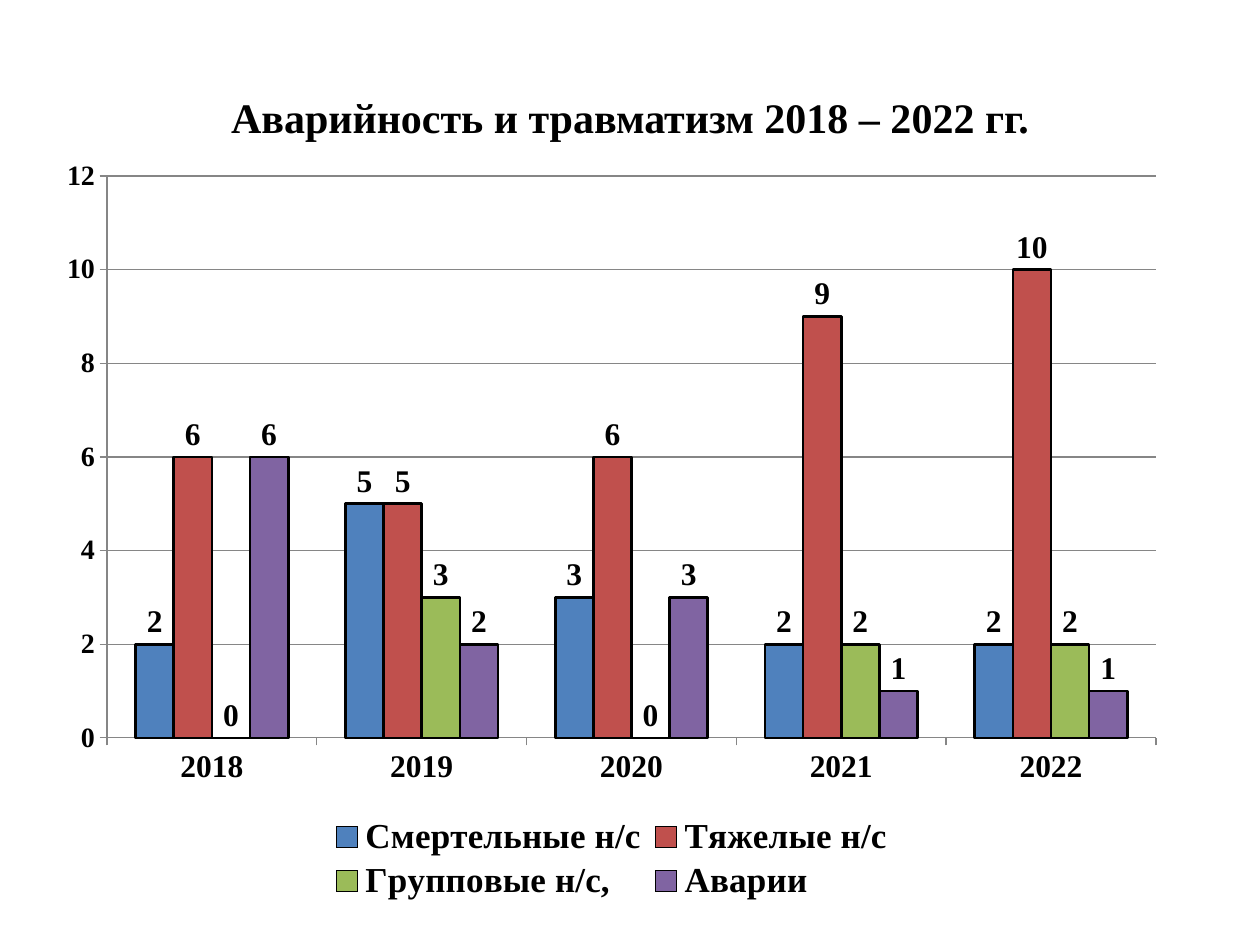
from dataclasses import dataclass

from lxml import etree
from pptx import Presentation
from pptx.chart.data import CategoryChartData
from pptx.dml.color import RGBColor
from pptx.enum.chart import XL_CHART_TYPE, XL_LABEL_POSITION, XL_LEGEND_POSITION, XL_TICK_MARK
from pptx.enum.text import MSO_ANCHOR, PP_ALIGN
from pptx.oxml.ns import qn
from pptx.util import Emu, Pt

COLUMNS = XL_CHART_TYPE.COLUMN_CLUSTERED
OUTSIDE_END = XL_LABEL_POSITION.OUTSIDE_END
LEGEND_BOTTOM = XL_LEGEND_POSITION.BOTTOM
TICK_OUT = XL_TICK_MARK.OUTSIDE
MIDDLE = MSO_ANCHOR.MIDDLE
CENTER = PP_ALIGN.CENTER

PX = 914400 / 126
TITLE_ONLY = 5

YEARS = ["2018", "2019", "2020", "2021", "2022"]
INCIDENTS = {
    "Смертельные н/с": (2, 5, 3, 2, 2),
    "Тяжелые н/с": (6, 5, 6, 9, 10),
    "Групповые н/с, ": (0, 3, 0, 2, 2),
    "Аварии": (6, 2, 3, 1, 1),
}


@dataclass(frozen=True)
class Theme:
    font: str = "Times New Roman"
    text: str = "000000"
    grid: str = "868686"
    series: tuple = ("4F81BD", "C0504D", "9BBB59", "8064A2")
    title_size: int = 24
    legend_size: int = 20
    label_size: int = 18
    scale_size: int = 16


def px(*lengths):
    return [Emu(round(length * PX)) for length in lengths]


def rgb(value):
    return RGBColor.from_string(value)


class SlideBuilder:
    def __init__(self, page, theme):
        self.page = page
        self.theme = theme

    def style_font(self, font, size):
        values = {"name": self.theme.font, "size": Pt(size), "bold": True}
        for name, value in values.items():
            setattr(font, name, value)
        font.color.rgb = rgb(self.theme.text)

    def style_line(self, line, color, width):
        line.color.rgb = rgb(color)
        line.width = Pt(width)

    def title(self, text, frame):
        box = self.page.shapes.title
        for name, value in zip(("left", "top", "width", "height"), px(*frame)):
            setattr(box, name, value)
        box.text_frame.vertical_anchor = MIDDLE
        para = box.text_frame.paragraphs[0]
        para.alignment = CENTER
        span = para.add_run()
        span.text = text
        self.style_font(span.font, self.theme.title_size)

    def set_layout(self, parent, index, frame, area, inner=False):
        """Place a chart part at a px area of the slide, within the chart frame."""
        for old in parent.findall(qn("c:layout")):
            parent.remove(old)
        layout = etree.Element(qn("c:layout"))
        manual = etree.SubElement(layout, qn("c:manualLayout"))
        left, top, width, height = frame
        values = {"layoutTarget": "inner"} if inner else {}
        values.update(
            xMode="edge",
            yMode="edge",
            x=round((area[0] - left) / width, 4),
            y=round((area[1] - top) / height, 4),
            w=round(area[2] / width, 4),
            h=round(area[3] / height, 4),
        )
        for name, value in values.items():
            etree.SubElement(manual, qn(f"c:{name}")).set("val", str(value))
        parent.insert(index, layout)

    def column_chart(self, categories, rows, frame, plot_area, legend_area):
        theme = self.theme
        data = CategoryChartData(number_format="General")
        data.categories = categories
        for name, values in rows.items():
            data.add_series(name, values)
        chart = self.page.shapes.add_chart(COLUMNS, *px(*frame), data).chart
        chart.has_title = False
        self.style_font(chart.font, theme.label_size)

        chart.has_legend = True
        legend = chart.legend
        legend.position = LEGEND_BOTTOM
        legend.include_in_layout = False
        self.style_font(legend.font, theme.legend_size)

        axes = ((chart.category_axis, theme.label_size), (chart.value_axis, theme.scale_size))
        for axis, size in axes:
            axis.major_tick_mark = TICK_OUT
            self.style_font(axis.tick_labels.font, size)
            self.style_line(axis.format.line, theme.grid, 0.75)
        scale = chart.value_axis
        scale.minimum_scale, scale.maximum_scale, scale.major_unit = 0, 12, 2
        scale.has_major_gridlines = True
        self.style_line(scale.major_gridlines.format.line, theme.grid, 0.75)

        plot = chart.plots[0]
        plot.gap_width = 150
        plot.overlap = 0
        plot.vary_by_categories = False
        for series, color in zip(plot.series, theme.series):
            series.format.fill.solid()
            series.format.fill.fore_color.rgb = rgb(color)
            self.style_line(series.format.line, theme.text, 1.5)
            labels = series.data_labels
            labels.show_value = True
            labels.position = OUTSIDE_END
            self.style_font(labels.font, theme.label_size)

        chart_space = chart.element
        self.set_layout(chart_space.find(".//" + qn("c:plotArea")), 0, frame, plot_area, inner=True)
        self.set_layout(chart_space.find(".//" + qn("c:legend")), 1, frame, legend_area)


def main():
    deck = Presentation()
    deck.slide_width, deck.slide_height = px(1260, 945)
    page = deck.slides.add_slide(deck.slide_layouts[TITLE_ONLY])
    builder = SlideBuilder(page, Theme())
    builder.title("Аварийность и травматизм 2018 – 2022 гг.", (63, 38, 1134, 158))
    builder.column_chart(
        YEARS,
        INCIDENTS,
        frame=(44, 145, 1134, 764),
        plot_area=(107, 176, 1049, 562),
        legend_area=(322, 812, 580, 94),
    )
    deck.save("out.pptx")


if __name__ == "__main__":
    main()
